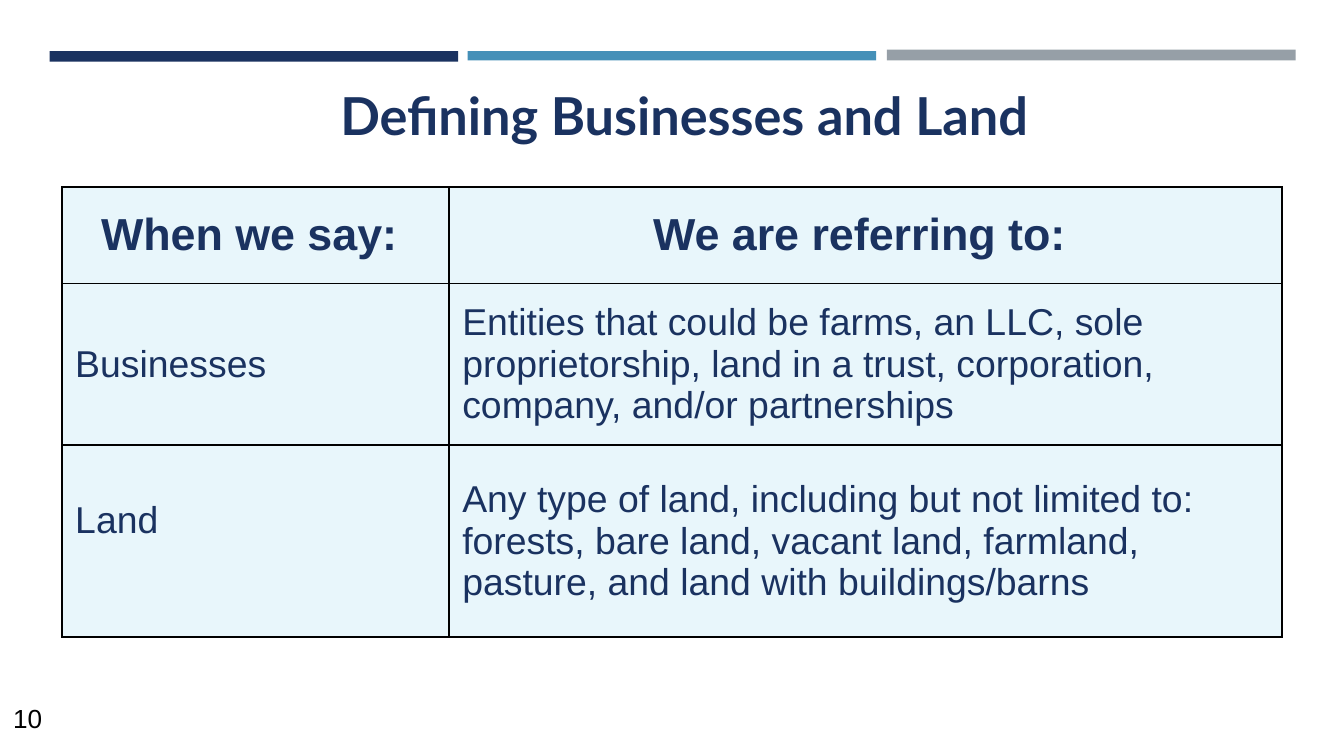
from typing import Any, NamedTuple

from lxml.etree import SubElement
from pptx import Presentation
from pptx.dml.color import RGBColor
from pptx.enum.shapes import MSO_SHAPE
from pptx.enum.text import MSO_ANCHOR, PP_ALIGN
from pptx.oxml.ns import qn
from pptx.util import Inches, Pt

NAVY, PALE, BLACK = "1A3260", "E8F6FB", "000000"
SIDES = ("left", "top", "right", "bottom")
HEAD = {"name": "Arial", "size": Pt(24), "bold": True}
BODY = {"name": "Arial", "size": Pt(20), "bold": False}


class Bar(NamedTuple):
    """A coloured strip above the title."""
    left: float
    top: float
    high: float
    hue: str


class Row(NamedTuple):
    """A table row with its two texts and look."""
    high: float
    term: str
    sense: str
    font: dict[str, Any]
    align: PP_ALIGN
    lift: float = 0


BARS = (
    Bar(0.37, 0.38, 0.08, NAVY),
    Bar(6.6, 0.37, 0.08, "969FA7"),
    Bar(3.48, 0.38, 0.07, "4590B8"),
)
COLS = (2.88, 6.2)
ROWS = (
    Row(0.72, "When we say: ", "We are referring to: ", HEAD, PP_ALIGN.CENTER),
    Row(1.13, "Businesses",
        "Entities that could be farms, an LLC, sole proprietorship, "
        "land in a trust, corporation, company, and/or partnerships",
        BODY, PP_ALIGN.LEFT),
    Row(1.43, "Land",
        "Any type of land, including but not limited to: forests, bare land, "
        "vacant land, farmland, pasture, and land with buildings/barns",
        BODY, PP_ALIGN.LEFT, 0.31),
)


def paint(fmt: Any, hue: str) -> None:
    """Fill a format with a solid colour."""
    fmt.solid()
    fmt.fore_color.rgb = RGBColor.from_string(hue)


def write(frame: Any, text: str, font: dict[str, Any], hue: str,
          align: PP_ALIGN) -> Any:
    """Put styled text in a frame and return its paragraph."""
    para = frame.paragraphs[0]
    para.alignment = align
    run = para.add_run()
    run.text = text
    for key, val in font.items():
        setattr(run.font, key, val)
    paint(run.font.fill, hue)
    return para


def add_bar(slide: Any, bar: Bar) -> None:
    """Draw one strip."""
    shape = slide.shapes.add_shape(
        MSO_SHAPE.RECTANGLE, Inches(bar.left), Inches(bar.top),
        Inches(3.04), Inches(bar.high))
    shape.shadow.inherit = False
    paint(shape.fill, bar.hue)
    shape.line.fill.background()


def add_box(slide: Any, box: tuple[float, ...], pad: float) -> Any:
    """Add a wrapping text box and return its frame."""
    frame = slide.shapes.add_textbox(*map(Inches, box)).text_frame
    frame.word_wrap = True
    frame.margin_top = frame.margin_bottom = Inches(pad)
    return frame


def edge(cell: Any) -> None:
    """Give a cell thin black borders."""
    props = cell._tc.get_or_add_tcPr()
    for spot, tag in enumerate(("a:lnL", "a:lnR", "a:lnT", "a:lnB")):
        line = SubElement(props, qn(tag), w=str(Pt(1)))
        fill = SubElement(line, qn("a:solidFill"))
        SubElement(fill, qn("a:srgbClr"), val=BLACK)
        props.insert(spot, line)


def add_cell(cell: Any, text: str, row: Row, lift: float) -> None:
    """Style and fill one table cell."""
    for side in SIDES:
        setattr(cell, f"margin_{side}", Inches(0.1))
    cell.margin_bottom = Inches(0.1 + lift)
    cell.vertical_anchor = MSO_ANCHOR.MIDDLE
    paint(cell.fill, PALE)
    edge(cell)
    write(cell.text_frame, text, row.font, NAVY, row.align)


def add_grid(slide: Any) -> None:
    """Draw the table of terms."""
    grid = slide.shapes.add_table(
        len(ROWS), len(COLS), Inches(0.46), Inches(1.39),
        Inches(sum(COLS)), Inches(sum(row.high for row in ROWS))).table
    for col, wide in zip(grid.columns, COLS):
        col.width = Inches(wide)
    for spot, row in enumerate(ROWS):
        grid.rows[spot].height = Inches(row.high)
        add_cell(grid.cell(spot, 0), row.term, row, row.lift)
        add_cell(grid.cell(spot, 1), row.sense, row, 0)


def main() -> None:
    """Build and save the slide."""
    deck = Presentation()
    deck.slide_width, deck.slide_height = Inches(10), Inches(10 * 9 / 16)
    slide = deck.slides.add_slide(deck.slide_layouts[6])
    for bar in BARS:
        add_bar(slide, bar)
    page = add_box(slide, (0, 5.18, 0.47, 0.45), 0.05)
    write(page, "10", {"name": "Arial", "size": Pt(14)}, BLACK, PP_ALIGN.LEFT)
    title = add_box(slide, (0.53, 0.45, 8.95, 0.76), 0.1)
    para = write(title, "Defining Businesses and Land",
                 {"name": "Lato", "size": Pt(28), "bold": True},
                 NAVY, PP_ALIGN.CENTER)
    para.line_spacing = 1.15
    para._p.get_or_add_pPr().set("marL", str(Inches(0.17)))
    add_grid(slide)
    deck.save("out.pptx")


if __name__ == "__main__":
    main()
